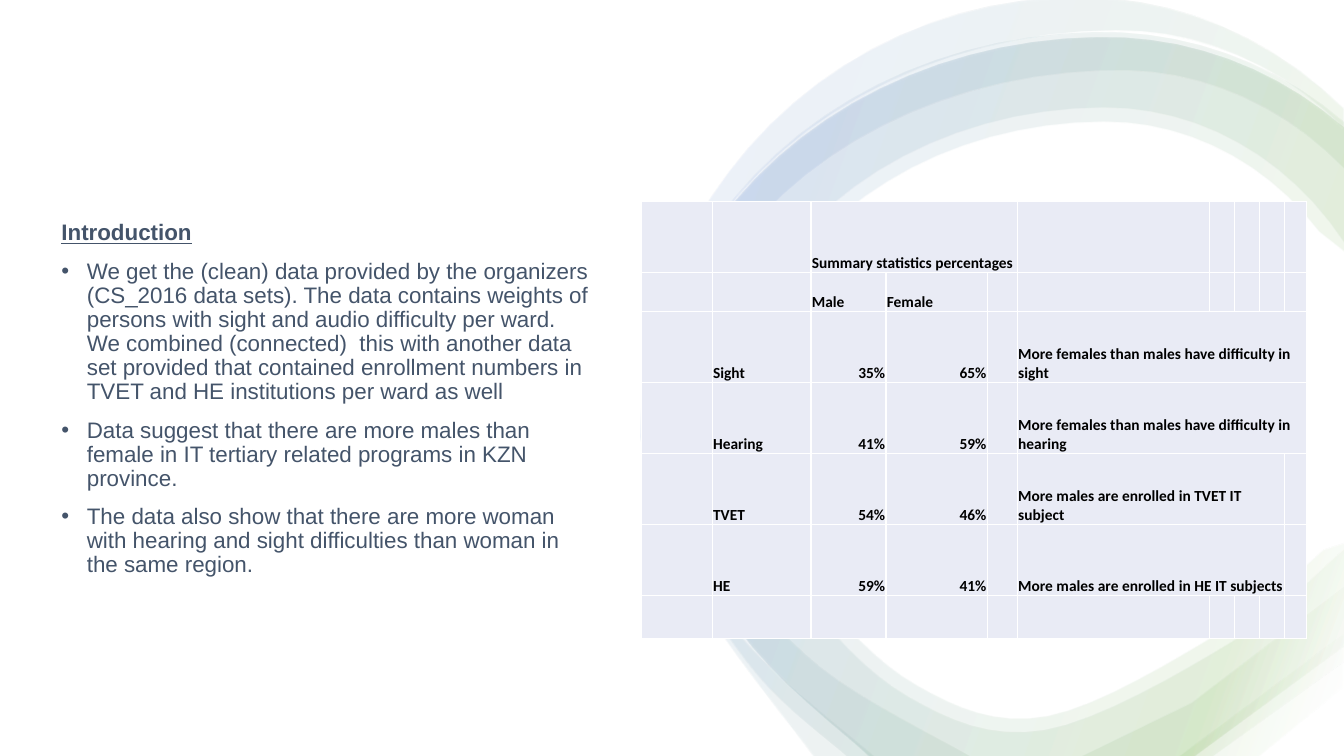
import math
from collections import namedtuple
from dataclasses import dataclass

from lxml import etree
from pptx import Presentation
from pptx import util as u
from pptx.dml.color import RGBColor
from pptx.enum import shapes, text
from pptx.oxml import parse_xml
from pptx.oxml.ns import nsdecls, qn

Box = namedtuple("Box", "left top width height")


@dataclass(frozen=True)
class Theme:
    paper: str = "FFFFFF"
    body: str = "44546A"
    cell: str = "E9EBF5"
    cell_text: str = "000000"
    body_font: str = "Arial"
    cell_font: str = "Calibri"
    body_size: int = 16
    cell_size: int = 11
    border_width: int = 1
    ring_stops: tuple = ((2, "FFFFFF"), (16, "70AD47"), (85, "4472C4"), (100, "FFFFFF"))
    ring_opacity: int = 10
    ring_angle: int = 200


THEME = Theme()

HEADING = "Introduction"
BULLETS = [
    "We get the (clean) data provided by the organizers (CS_2016 data sets). The data contains "
    "weights of persons with sight and audio difficulty per ward. We combined (connected)  this "
    "with another data set provided that contained enrollment numbers in TVET and HE institutions "
    "per ward as well",
    "Data suggest that there are more males than female in IT tertiary related programs in KZN province.",
    "The data also show that there are more woman with hearing and sight difficulties than woman "
    "in the same region.",
]

COLUMN_WIDTHS = [1.79, 2.49, 1.89, 2.55, 0.76, 4.84] + [0.63] * 3 + [0.55]
STATISTICS = [  # label, male, female, note, last column of the note
    ("Sight", "35%", "65%", "More females than males have difficulty in sight", 9),
    ("Hearing", "41%", "59%", "More females than males have difficulty in hearing", 9),
    ("TVET", "54%", "46%", "More males are enrolled in TVET IT subject", 8),
    ("HE", "59%", "41%", "More males are enrolled in HE IT subjects", 8),
]
NOTE_COLUMN = 5
TALL_ROW = 1.79
ROW_HEIGHTS = [TALL_ROW, 0.98] + [TALL_ROW] * len(STATISTICS) + [1.08]

# The ring is laid out on a grid of 2.54 cm that starts at the slide corner.
RING_GRID = 2.54
GRID_PARTS = 1000
RIGHT, BOTTOM, MIDDLE = 13.33, 7.5, 4.34


def smooth(points, before, steps=8):
    """Return a Catmull-Rom curve through the points, arriving from the point before."""
    padded = [before, *points, points[-1]]
    curve = []
    for a, b, c, d in zip(padded, padded[1:], padded[2:], padded[3:]):
        for step in range(1, steps + 1):
            t = step / steps
            curve.append(tuple(
                (2 * q + (r - p) * t + (2 * p - 5 * q + 4 * r - s) * t**2 + (3 * q - p - 3 * r + s) * t**3) / 2
                for p, q, r, s in zip(a, b, c, d)))
    return curve


def ring_edge(top_x, top_y, left_x, right_radius, lower, steps=32):
    """Follow two elliptic quadrants from the right side over the top, then the lower points."""
    start = math.acos((RIGHT - top_x) / right_radius)
    arch = []
    for step in range(steps + 1):
        angle = start + (math.pi - start) * step / steps
        radius = right_radius if angle < math.pi / 2 else top_x - left_x
        arch.append((top_x + radius * math.cos(angle), MIDDLE - (MIDDLE - top_y) * math.sin(angle)))
    return arch + smooth([(left_x, MIDDLE), *lower], (left_x, MIDDLE - 1))


def inset(edge, centre_x, distance):
    """Move an edge towards the ring's centre, keeping its ends on the right side."""
    moved = []
    for x, y in edge:
        share = distance / math.hypot(x - centre_x, y - MIDDLE)
        moved.append((x + (centre_x - x) * share, y + (MIDDLE - y) * share))
    return [(RIGHT, moved[0][1]), *moved[1:-1], (RIGHT, moved[-1][1])]


def ring_bands():
    """Return the bands, each a list of contours."""
    wide_outer = ring_edge(10.71, -0.02, 6.36, 3.94, [(6.87, 5.82), (8.08, BOTTOM)])
    wide_inner = ring_edge(11.1, 0.31, 6.41, 3.43, [(6.85, 5.6), (7.56, 6.53), (8.68, BOTTOM)])
    wide_tail = [(RIGHT, 6.81), (12.49, BOTTOM), (11.7, BOTTOM), (RIGHT, 6.29)]
    middle_outer = ring_edge(10.94, 0.32, 6.41, 3.8, [(6.7, 5.44), (7.51, 6.69), (8.4, BOTTOM)])
    middle_inner = ring_edge(11.11, 0.7, 6.65, 3.26, [(7.2, 5.55), (8.14, 6.62), (9.62, BOTTOM)])
    middle_tail = [(RIGHT, 6.56), (12.03, BOTTOM), (10.73, BOTTOM), (11.82, 6.97), (RIGHT, 5.82)]
    closed_outer = ring_edge(10.96, 0.37, 6.42, 3.74, [(7.32, 6.23), (8.62, BOTTOM)])
    closed_outer += [(11.85, BOTTOM), (RIGHT, 6.41)]
    closed_inner = ring_edge(10.96, 1.07, 7.14, 2.94, [
        (7.91, 5.83), (9.01, 6.91), (10.36, 7.24), (12.21, 6.37), (RIGHT, 5.45)])
    return [
        [wide_tail, wide_outer + wide_inner[::-1]],
        [middle_tail, middle_outer + middle_inner[::-1]],
        [closed_outer + closed_inner[::-1]],
        [closed_outer + inset(closed_inner, 10.96, 0.14)[::-1]],
    ]


def fill_ring_band(shape):
    stops = "".join(
        f'<a:gs pos="{position * 1000}"><a:srgbClr val="{color}">'
        f'<a:alpha val="{THEME.ring_opacity * 1000}"/></a:srgbClr></a:gs>'
        for position, color in THEME.ring_stops)
    gradient = parse_xml(
        f'<a:gradFill {nsdecls("a")} rotWithShape="1"><a:gsLst>{stops}</a:gsLst>'
        f'<a:lin ang="{THEME.ring_angle * 60000}" scaled="0"/></a:gradFill>')
    shape._element.spPr.find(qn("a:custGeom")).addnext(gradient)


def add_background(slide, box):
    paper = slide.shapes.add_shape(shapes.MSO_SHAPE.RECTANGLE, *box)
    paper.shadow.inherit = False
    paper.fill.solid()
    paper.fill.fore_color.rgb = RGBColor.from_string(THEME.paper)
    paper.line.fill.background()
    for band in ring_bands():
        contours = [[(round(x * GRID_PARTS), round(y * GRID_PARTS)) for x, y in contour] for contour in band]
        builder = slide.shapes.build_freeform(*contours[0][0], scale=u.Cm(RING_GRID) / GRID_PARTS)
        for index, contour in enumerate(contours):
            if index:
                builder.move_to(*contour[0])
            builder.add_line_segments(contour[1:], close=True)
        shape = builder.convert_to_shape(box.left, box.top)
        shape.shadow.inherit = False
        shape.line.fill.background()
        fill_ring_band(shape)


def style_run(run, font, size, color, bold=False):
    run.font.name = font
    run.font.size = u.Pt(size)
    run.font.bold = bold
    run.font.color.rgb = RGBColor.from_string(color)


def add_introduction(slide, box):
    frame = slide.shapes.add_textbox(*box).text_frame
    frame.word_wrap = True
    for index, content in enumerate([HEADING, *BULLETS]):
        paragraph = frame.add_paragraph() if index else frame.paragraphs[0]
        paragraph.text = content
        paragraph.line_spacing = 0.9
        run = paragraph.runs[0]
        style_run(run, THEME.body_font, THEME.body_size, THEME.body, bold=index == 0)
        run.font.underline = index == 0
        if index:
            paragraph.space_before = u.Pt(10)
            properties = paragraph._p.get_or_add_pPr()
            properties.set("marL", str(u.Cm(0.64)))
            properties.set("indent", str(-u.Cm(0.64)))
            etree.SubElement(properties, qn("a:buFont")).set("typeface", THEME.body_font)
            etree.SubElement(properties, qn("a:buChar")).set("char", "•")


def style_cell(cell):
    cell.margin_left = cell.margin_right = cell.margin_top = u.Cm(0.02)
    cell.margin_bottom = 0
    cell.vertical_anchor = text.MSO_ANCHOR.BOTTOM
    cell.fill.solid()
    cell.fill.fore_color.rgb = RGBColor.from_string(THEME.cell)
    properties = cell._tc.get_or_add_tcPr()
    for index, side in enumerate(("lnL", "lnR", "lnT", "lnB")):
        properties.insert(index, parse_xml(
            f'<a:{side} {nsdecls("a")} w="{u.Pt(THEME.border_width)}"><a:solidFill>'
            f'<a:srgbClr val="{THEME.paper}"/></a:solidFill></a:{side}>'))


def write_cell(table, row, column, content, last_column=None):
    cell = table.cell(row, column)
    if last_column:
        cell.merge(table.cell(row, last_column))
    cell.text_frame.text = content
    paragraph = cell.text_frame.paragraphs[0]
    if content.endswith("%"):
        paragraph.alignment = text.PP_ALIGN.RIGHT
    style_run(paragraph.runs[0], THEME.cell_font, THEME.cell_size, THEME.cell_text, bold=True)


def add_statistics(slide, box):
    table = slide.shapes.add_table(len(ROW_HEIGHTS), len(COLUMN_WIDTHS), *box).table
    table.first_row = table.horz_banding = False
    for column, width in zip(table.columns, COLUMN_WIDTHS):
        column.width = u.Cm(width)
    for row, height in zip(table.rows, ROW_HEIGHTS):
        row.height = u.Cm(height)
    for cell in table.iter_cells():
        style_cell(cell)
    write_cell(table, 0, 2, "Summary statistics percentages", last_column=4)
    for column, heading in enumerate(("Male", "Female"), start=2):
        write_cell(table, 1, column, heading)
    for row, (*values, note, last_column) in enumerate(STATISTICS, start=2):
        for column, value in enumerate(values, start=1):
            write_cell(table, row, column, value)
        write_cell(table, row, NOTE_COLUMN, note, last_column)


def main():
    presentation = Presentation()
    presentation.slide_width, presentation.slide_height = u.Cm(33.87), u.Cm(19.05)
    slide = presentation.slides.add_slide(presentation.slide_layouts[6])
    add_background(slide, Box(0, 0, presentation.slide_width, presentation.slide_height))
    add_introduction(slide, Box(u.Cm(1.3), u.Cm(5.46), u.Cm(13.92), u.Cm(10.19)))
    add_statistics(slide, Box(u.Cm(16.16), u.Cm(5.08), u.Cm(sum(COLUMN_WIDTHS)), u.Cm(sum(ROW_HEIGHTS))))
    presentation.save("out.pptx")


if __name__ == "__main__":
    main()
